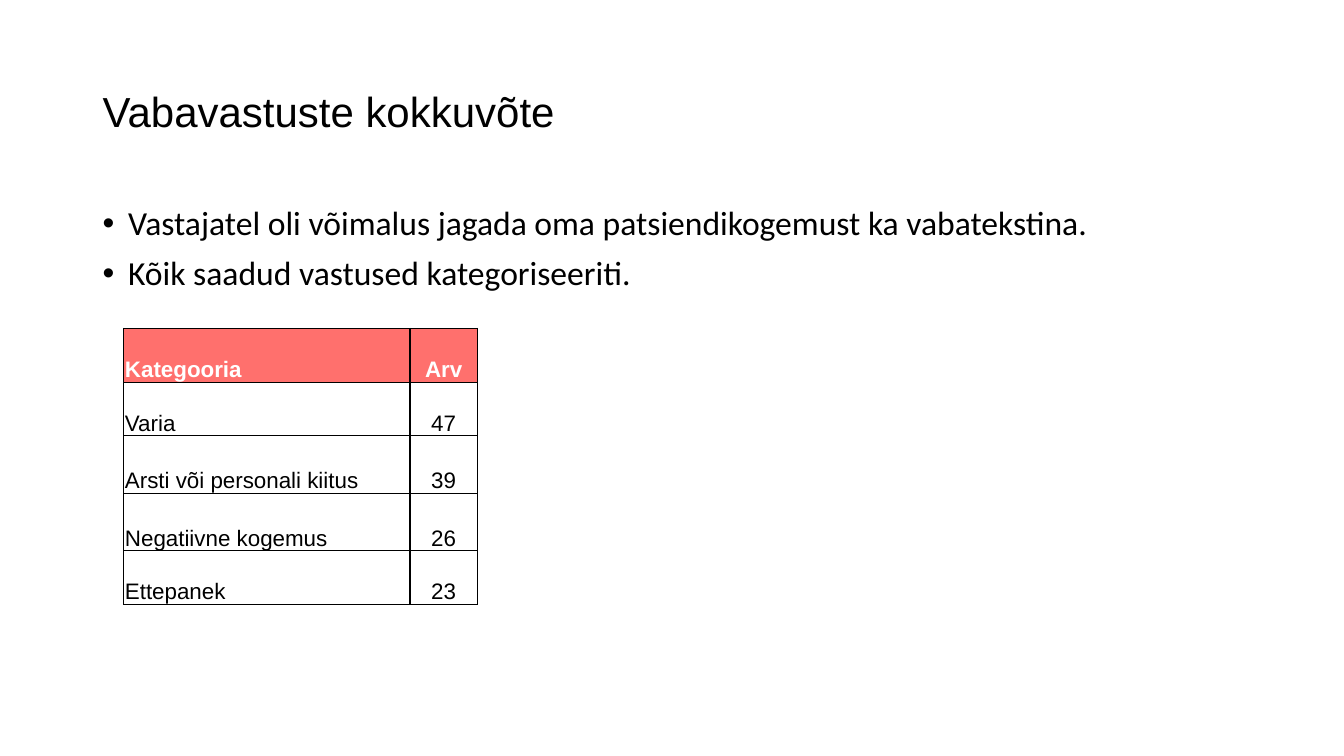
"""Build the slide that sums up the free-text answers."""
from lxml import etree
from pptx import Presentation
from pptx.dml.color import RGBColor
from pptx.enum.text import MSO_ANCHOR, PP_ALIGN
from pptx.oxml.ns import qn
from pptx.util import Cm, Pt

LEFT, CENTER = PP_ALIGN.LEFT, PP_ALIGN.CENTER
TOP, MIDDLE, BOTTOM = MSO_ANCHOR.TOP, MSO_ANCHOR.MIDDLE, MSO_ANCHOR.BOTTOM


def color(code):
    return RGBColor.from_string(code)


def write(para, text, size=16, font="Arial", ink="000000", bold=False,
          align=LEFT, line=1.0, before=0, bullet=None):
    if bullet:
        props = para._p.get_or_add_pPr()
        props.set("marL", str(Cm(0.64)))
        props.set("indent", str(-Cm(0.64)))
        etree.SubElement(props, qn("a:buFont")).set("typeface", "Arial")
        etree.SubElement(props, qn("a:buChar")).set("char", bullet)
    para.alignment = align
    para.line_spacing = line
    para.space_before = Pt(before)
    run = para.add_run()
    run.text = text
    run.font.size = Pt(size)
    run.font.name = font
    run.font.bold = bold
    run.font.color.rgb = color(ink)


class Deck:
    """Hold the style and the current slide."""
    accent, light, dark = "FF706D", "FFFFFF", "000000"

    def __init__(self):
        self.show = Presentation()
        self.show.slide_width, self.show.slide_height = Cm(33.87), Cm(19.05)
        self.slide = self.show.slides.add_slide(self.show.slide_layouts[6])

    def text(self, box, lines, anchor=TOP, gap=0, **style):
        frame = self.slide.shapes.add_textbox(*map(Cm, box)).text_frame
        frame.word_wrap = True
        frame.vertical_anchor = anchor
        for i, line in enumerate(lines):
            para = frame.add_paragraph() if i else frame.paragraphs[0]
            write(para, line, line=0.9, before=gap if i else 0, **style)

    def border(self, cell):
        props = cell._tc.get_or_add_tcPr()
        for i, side in enumerate("LRTB"):
            edge = etree.Element(qn("a:ln" + side), w=str(Pt(1)))
            fill = etree.SubElement(edge, qn("a:solidFill"))
            etree.SubElement(fill, qn("a:srgbClr")).set("val", self.dark)
            props.insert(i, edge)

    def cell(self, cell, text, head, align):
        cell.margin_left = cell.margin_right = cell.margin_top = Cm(0.03)
        cell.margin_bottom = 0
        cell.vertical_anchor = BOTTOM
        if head:
            cell.fill.solid()
            cell.fill.fore_color.rgb = color(self.accent)
        else:
            cell.fill.background()
        self.border(cell)
        write(cell.text_frame.paragraphs[0], text, bold=head, align=align,
              ink=self.light if head else self.dark)

    def table(self, left, top, widths, heights, rows):
        grid = self.slide.shapes.add_table(
            len(rows), len(widths), Cm(left), Cm(top),
            Cm(sum(widths)), Cm(sum(heights))).table
        grid.horz_banding = False
        for col, width in zip(grid.columns, widths):
            col.width = Cm(width)
        for r, (height, row) in enumerate(zip(heights, rows)):
            grid.rows[r].height = Cm(height)
            for c, text in enumerate(row):
                self.cell(grid.cell(r, c), text, r == 0, CENTER if c else LEFT)


def main():
    deck = Deck()
    deck.text((2.34, 1.02, 29.21, 3.68), ["Vabavastuste kokkuvõte"],
              anchor=MIDDLE, size=30)
    deck.text((2.34, 5.08, 29.21, 12.09), [
        "Vastajatel oli võimalus jagada oma patsiendikogemust ka vabatekstina.",
        "Kõik saadud vastused kategoriseeriti.",
    ], gap=10, size=24, font="Calibri", bullet="•")
    deck.table(3.12, 8.28, (7.21, 1.7), (1.35, 1.35, 1.45, 1.45, 1.35), [
        ("Kategooria", "Arv"),
        ("Varia", "47"),
        ("Arsti või personali kiitus", "39"),
        ("Negatiivne kogemus", "26"),
        ("Ettepanek", "23"),
    ])
    deck.show.save("out.pptx")


if __name__ == "__main__":
    main()
